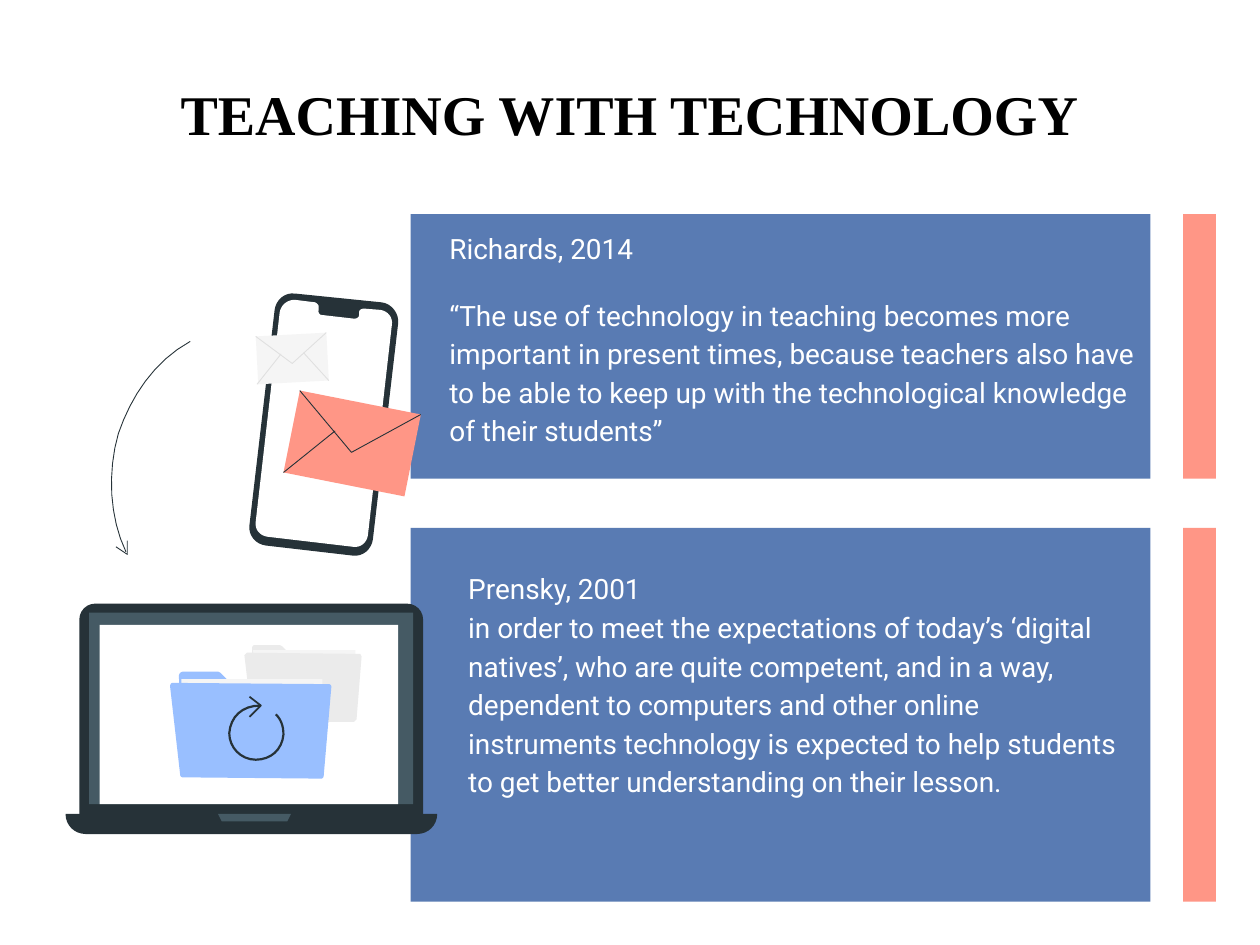
from pptx import Presentation
from pptx import util as u
from pptx.dml.color import RGBColor
from pptx.enum import shapes, text

NAVY, SLATE, WHITE = "263238", "455A64", "FFFFFF"
CORAL, BLUE, SKY = "FF9686", "597BB3", "99BFFF"
PALE, GREY, SILVER = "F5F5F5", "EBEBEB", "E0E0E0"
GRID = u.Cm(2.54) / 100  # drawing unit of the illustrations
CURVE_STEPS = 8

RICHARDS = [
    "Richards, 2014",
    "“The use of technology in teaching becomes more important in present "
    "times, because teachers also have to be able to keep up with the "
    "technological knowledge of their students”",
]
PRENSKY = [
    "Prensky, 2001",
    "in order to meet the expectations of today’s ‘digital natives’, who are "
    "quite competent, and in a way, dependent to computers and other online "
    "instruments technology is expected to help students to get better "
    "understanding on their lesson.",
]


def rgb(value):
    return RGBColor.from_string(value)


def apply(target, values):
    for name, value in values.items():
        setattr(target, name, value)


def paint(shape, color):
    shape.fill.solid()
    shape.fill.fore_color.rgb = rgb(color)
    shape.line.fill.background()
    shape.shadow.inherit = False


def add_block(parent, color, left, top, width, height, corner=0):
    """Rectangle in centimetres, rounded when a corner ratio is given."""
    kind = shapes.MSO_SHAPE.ROUNDED_RECTANGLE if corner else shapes.MSO_SHAPE.RECTANGLE
    block = parent.add_shape(kind, u.Cm(left), u.Cm(top), u.Cm(width), u.Cm(height))
    if corner:
        block.adjustments[0] = corner
    paint(block, color)


def add_text(parent, box, lines, font, color, paragraph, anchor):
    frame = parent.add_textbox(*map(u.Cm, box)).text_frame
    inset = u.Cm(0.25)
    apply(frame, {"word_wrap": True, "vertical_anchor": anchor,
                  "margin_left": inset, "margin_right": inset,
                  "margin_top": inset, "margin_bottom": inset})
    for index, line in enumerate(lines):
        item = frame.paragraphs[0] if index == 0 else frame.add_paragraph()
        apply(item, paragraph)
        run = item.add_run()
        run.text = line
        apply(run.font, font)
        run.font.color.rgb = rgb(color)


def trace(steps):
    """Points along steps: (x, y) is a corner, six numbers are a cubic curve."""
    points = [steps[0]]
    for step in steps[1:]:
        if len(step) == 2:
            points.append(step)
            continue
        knots = [points[-1], step[0:2], step[2:4], step[4:6]]
        for n in range(1, CURVE_STEPS + 1):
            t = n / CURVE_STEPS
            weights = ((1 - t) ** 3, 3 * t * (1 - t) ** 2, 3 * t * t * (1 - t), t ** 3)
            points.append(tuple(sum(w * knot[axis] for w, knot in zip(weights, knots))
                                for axis in (0, 1)))
    return [(x * GRID, y * GRID) for x, y in points]


def add_outline(parent, steps, close):
    start, *others = trace(steps)
    builder = parent.build_freeform(*start, scale=1.0)
    builder.add_line_segments(others, close=close)
    return builder.convert_to_shape()


def add_form(parent, color, *steps):
    paint(add_outline(parent, steps, True), color)


def add_stroke(parent, color, width, *steps):
    stroke = add_outline(parent, steps, False)
    stroke.fill.background()
    stroke.line.color.rgb = rgb(color)
    stroke.line.width = u.Pt(width)
    stroke.shadow.inherit = False


def draw_phone(parent):
    # Case and screen with its notch
    add_form(parent, NAVY, (234, 233), (303, 240), (311, 241, 317, 249, 316, 257),
             (296, 428), (295, 436, 288, 442, 280, 441), (211, 433),
             (203, 432, 197, 425, 198, 417), (218, 246), (219, 238, 226, 232, 234, 233))
    add_form(parent, WHITE, (234, 238), (250, 240), (252, 241, 253, 242, 253, 244),
             (253, 246), (252, 248, 254, 250, 255, 250), (281, 253),
             (283, 253, 285, 252, 285, 250), (285, 248), (285, 246, 287, 245, 289, 245),
             (302, 246), (308, 247, 312, 252, 311, 258), (292, 425),
             (291, 431, 286, 435, 280, 434), (212, 426),
             (206, 425, 202, 420, 203, 414), (222, 248), (223, 242, 228, 238, 234, 238))
    # White envelope
    add_form(parent, PALE, (259, 264), (203, 267), (205, 305), (261, 302))
    add_stroke(parent, SILVER, 0.5, (259, 264), (232, 288.5), (203, 267))
    add_stroke(parent, SILVER, 0.5, (223, 281), (204, 305))
    add_stroke(parent, SILVER, 0.5, (241, 280), (261, 302))
    # Coral envelope
    add_form(parent, CORAL, (238, 310), (225, 375), (321, 394), (334, 329))
    add_stroke(parent, NAVY, 0.5, (238, 310), (279, 359), (334, 329))
    add_stroke(parent, NAVY, 0.5, (266, 342), (225, 375))


def draw_laptop(parent):
    # Lid, base, bezel, latch and screen
    add_block(parent, NAVY, 1.6, 12.17, 6.93, 4.57, corner=0.07)
    add_form(parent, NAVY, (52, 646), (52, 655, 59, 662, 68, 662), (331, 662),
             (340, 662, 347, 655, 347, 646))
    add_block(parent, SLATE, 1.8, 12.35, 6.53, 3.86)
    add_form(parent, SLATE, (173, 646), (176, 652), (228, 652), (231, 646))
    add_block(parent, WHITE, 2.01, 12.6, 6.02, 3.61)
    # Grey folder: back, sheet, front
    add_form(parent, GREY, (202, 512), (222, 512), (224, 513), (232, 521), (279, 521),
             (281, 521, 282, 523, 282, 524), (282, 557), (279, 559), (205, 559),
             (203, 559, 202, 558, 202, 556), (200, 515), (200, 513, 201, 512, 202, 512))
    add_form(parent, PALE, (201, 516), (200, 565), (282, 565), (282, 516))
    add_form(parent, GREY, (196, 518), (286, 519), (287, 521), (283, 571), (281, 573),
             (202, 573), (200, 571), (194, 520))
    # Blue folder: back, sheet, front
    add_form(parent, SKY, (146, 533), (173, 533), (175, 534), (186, 545), (189, 546),
             (252, 546), (254, 546, 256, 548, 256, 550), (256, 595), (252, 598),
             (149, 598), (147, 598, 145, 596, 145, 594), (142, 537),
             (142, 534, 144, 533, 146, 533))
    add_form(parent, PALE, (144, 539), (143, 606), (256, 607), (256, 539))
    add_form(parent, SKY, (137, 542), (261, 543), (262, 543, 263, 544, 263, 545),
             (257, 615), (257, 617, 256, 618, 255, 618), (145, 617),
             (144, 617, 143, 616, 143, 615), (135, 545), (135, 543, 136, 542, 137, 542))
    # Refresh arrow
    add_stroke(parent, NAVY, 1.25, (219, 567), (223, 571, 225, 576, 225, 583),
               (224, 595, 215, 603, 203, 603), (191, 603, 182, 593, 182, 582),
               (183, 569, 192, 560, 207, 560))
    add_stroke(parent, NAVY, 1, (198, 553), (207, 560), (198, 569))


def draw_sweep(parent):
    add_stroke(parent, NAVY, 0.5, (151, 271), (122, 287, 104, 315, 94, 344),
               (85, 375, 87, 411, 100, 438))
    add_stroke(parent, NAVY, 0.5, (92, 434), (101, 440), (101, 429))


def main():
    deck = Presentation()
    deck.slide_width, deck.slide_height = u.Cm(25.4), u.Cm(19.05)
    page = deck.slides.add_slide(deck.slide_layouts[6]).shapes

    # Side bars, then quote panels, on the same two rows
    for color, left, width in ((CORAL, 23.85, 0.66), (BLUE, 8.28, 14.91)):
        for top, height in ((4.32, 5.33), (10.64, 7.54)):
            add_block(page, color, left, top, width, height)

    # Title and quotes
    top_anchor, middle = text.MSO_ANCHOR.TOP, text.MSO_ANCHOR.MIDDLE
    quote_font = {"name": "Roboto", "size": u.Pt(16)}
    add_text(page, (8.81, 4.32, 14.38, 5.18), RICHARDS, quote_font, WHITE,
             {"line_spacing": 1.15, "space_after": u.Pt(16)}, top_anchor)
    add_text(page, (0.86, 1.22, 23.67, 2.11), ["TEACHING WITH TECHNOLOGY"],
             {"name": "Times New Roman", "size": u.Pt(32), "bold": True}, "000000",
             {"alignment": text.PP_ALIGN.CENTER}, middle)
    add_text(page, (9.19, 11.18, 13.77, 6.58), PRENSKY, quote_font, WHITE,
             {"line_spacing": 1.15}, top_anchor)

    # Illustrations, one group each
    for draw in (draw_phone, draw_laptop, draw_sweep):
        draw(page.add_group_shape().shapes)

    deck.save("out.pptx")


if __name__ == "__main__":
    main()
